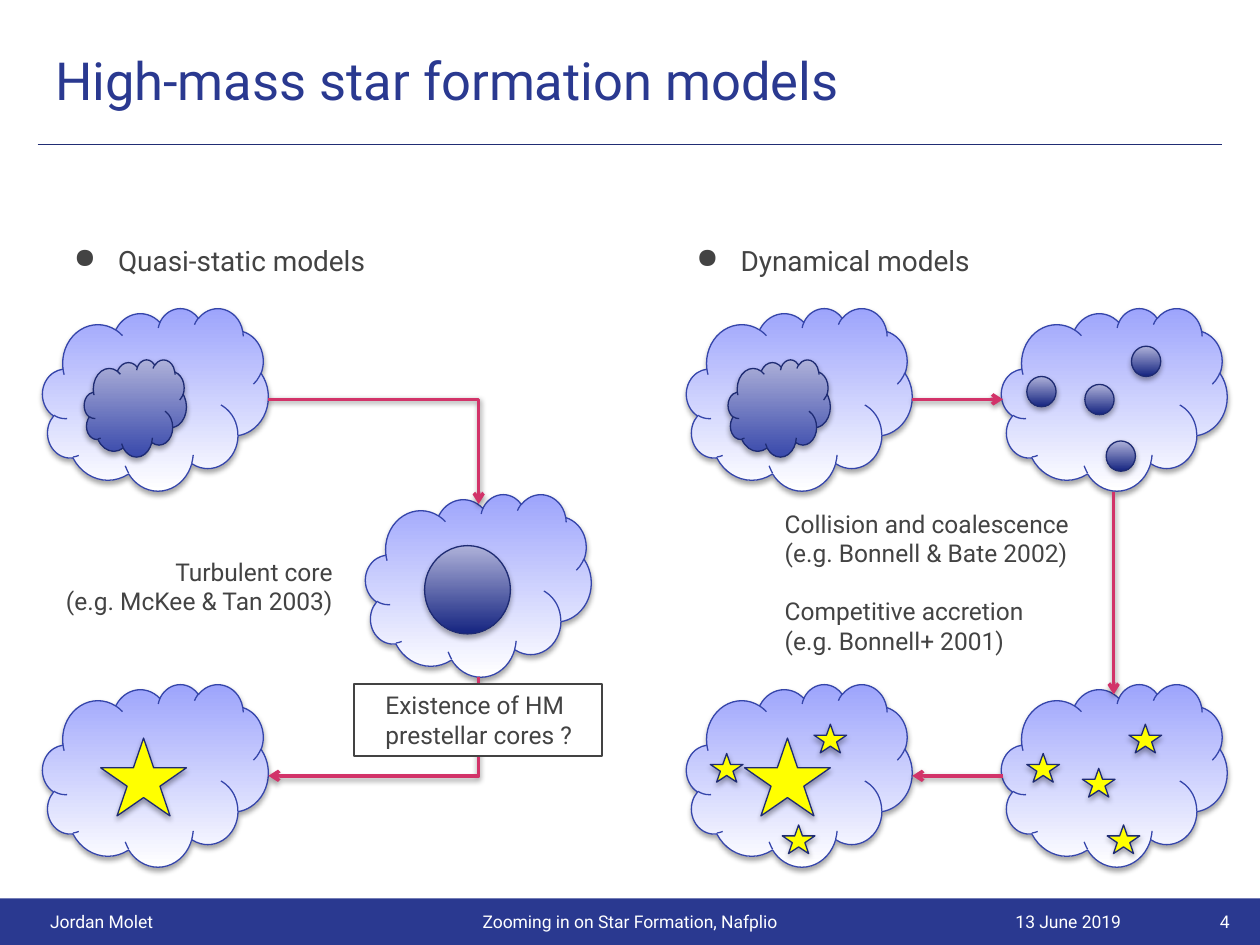
from lxml import etree
from pptx import Presentation
from pptx.dml.color import RGBColor
from pptx.enum.shapes import MSO_CONNECTOR, MSO_SHAPE
from pptx.enum.text import MSO_ANCHOR, MSO_AUTO_SIZE, PP_ALIGN
from pptx.oxml.ns import qn
from pptx.util import Cm, Pt

CLOUD, OVAL, STAR, RECT = (MSO_SHAPE.CLOUD, MSO_SHAPE.OVAL,
                           MSO_SHAPE.STAR_5_POINT, MSO_SHAPE.RECTANGLE)
STRAIGHT, ELBOW = MSO_CONNECTOR.STRAIGHT, MSO_CONNECTOR.ELBOW
LEFT, CENTER, RIGHT = PP_ALIGN.LEFT, PP_ALIGN.CENTER, PP_ALIGN.RIGHT
TOP, MIDDLE = MSO_ANCHOR.TOP, MSO_ANCHOR.MIDDLE
FONT = "Roboto"
COLORS = {
    "brand": "2A3990", "rule": "212D74", "text": "434343", "white": "FFFFFF",
    "arrow": "D23369", "cloud_top": "9DA4FC", "cloud_line": "3545AA",
    "core_top": "AEB1D9", "core_bottom": "152480", "clump_bottom": "3949AB",
    "core_line": "1E2B73", "star": "FFFF00", "black": "000000",
}

TITLE = "High-mass star formation models"
HEADINGS = [("Quasi-static models", 0.86), ("Dynamical models", 13.41)]

# kind: (preset, width, height, fill colours from top to bottom, line)
KINDS = {
    "cloud": (CLOUD, 4.55, 3.68, ("cloud_top", "white"), "cloud_line"),
    "clump": (CLOUD, 2.06, 1.96, ("core_top", "clump_bottom"), "core_line"),
    "core": (OVAL, 1.73, 1.78, ("core_top", "core_bottom"), "core_line"),
    "small core": (OVAL, 0.59, 0.61, ("core_top", "core_bottom"), "core_line"),
    "star": (STAR, 1.73, 1.57, ("star",), "core_line"),
    "small star": (STAR, 0.66, 0.58, ("star",), "core_line"),
}
LEFT_COL, CORE_COL, MID_COL, RIGHT_COL = 0.86, 7.37, 13.84, 20.19
TOP_ROW, CORE_ROW, BOTTOM_ROW = 6.21, 9.96, 13.79

# cloud left, cloud top, contents as (kind, offset x, offset y)
STAGES = [
    (LEFT_COL, TOP_ROW, [("clump", 0.84, 1.04)]),
    (CORE_COL, CORE_ROW, [("core", 1.19, 1.04)]),
    (LEFT_COL, BOTTOM_ROW, [("star", 1.17, 1.09)]),
    (MID_COL, TOP_ROW, [("clump", 0.84, 1.04)]),
    (RIGHT_COL, TOP_ROW, [
        ("small core", 0.51, 1.38), ("small core", 1.68, 1.54),
        ("small core", 2.62, 0.77), ("small core", 2.11, 2.68)]),
    (RIGHT_COL, BOTTOM_ROW, [
        ("small star", 0.51, 1.4), ("small star", 1.63, 1.7),
        ("small star", 2.13, 2.84), ("small star", 2.57, 0.81)]),
    (MID_COL, BOTTOM_ROW, [
        ("star", 1.17, 1.09), ("small star", 0.48, 1.4),
        ("small star", 1.93, 2.84), ("small star", 2.57, 0.81)]),
]

# connector, begin x, begin y, end x, end y, quarter turns
ARROWS = [
    (STRAIGHT, 18.39, 8.05, 20.22, 8.05, 0),
    (STRAIGHT, 22.45, 9.91, 22.45, 14.0, 0),
    (STRAIGHT, 20.22, 15.64, 18.39, 15.64, 0),
    (ELBOW, 5.41, 8.05, 9.65, 10.16, 0),
    (ELBOW, 6.53, 12.52, 8.53, 16.76, 1),
]

# left, top, width, height, alignment, groups of lines
NOTES = [
    (0.86, 11.1, 6.1, 1.45, RIGHT,
     [("Turbulent core", "(e.g. McKee & Tan 2003)")]),
    (15.57, 10.13, 6.38, 3.25, LEFT,
     [("Collision and coalescence", "(e.g. Bonnell & Bate 2002)"),
      ("Competitive accretion", "(e.g. Bonnell+ 2001)")]),
]
QUESTION = "Existence of HM prestellar cores ?"

FOOTER_TOP, FOOTER_HEIGHT = 18.11, 0.94
FOOTER = [  # text, left, width, alignment
    ("Jordan Molet", 0.76, 5.23, LEFT),
    ("Zooming in on Star Formation, Nafplio", 6.17, 13.06, CENTER),
    ("13 June 2019", 19.58, 3.91, CENTER),
    ("4", 23.93, 1.52, CENTER),
]


def rgb(name):
    return RGBColor.from_string(COLORS[name])


def add_child(parent, tag, **attributes):
    child = etree.SubElement(parent, qn(tag))
    for key, value in attributes.items():
        child.set(key, str(value))
    return child


def cast_shadow(effects, distance, opacity):
    shadow = add_child(effects, "a:outerShdw", blurRad=40000, dist=distance,
                       dir=5400000, rotWithShape=0)
    color = add_child(shadow, "a:srgbClr", val=COLORS["black"])
    add_child(color, "a:alpha", val=opacity)


def write(paragraph, text, size, color, align=LEFT):
    paragraph.alignment = align
    run = paragraph.add_run()
    run.text = text
    run.font.name, run.font.size = FONT, Pt(size)
    run.font.color.rgb = rgb(color)


def set_frame(frame, anchor=TOP, vertical_inset=0.25, wrap=True):
    frame.word_wrap = wrap
    frame.auto_size = MSO_AUTO_SIZE.NONE
    frame.vertical_anchor = anchor
    frame.margin_left = frame.margin_right = Cm(0.25)
    frame.margin_top = frame.margin_bottom = Cm(vertical_inset)
    return frame


def add_text_frame(slide, left, top, width, height, **options):
    box = slide.shapes.add_textbox(Cm(left), Cm(top), Cm(width), Cm(height))
    return set_frame(box.text_frame, **options)


def add_plain_rect(slide, left, top, width, height, fill):
    rect = slide.shapes.add_shape(RECT, Cm(left), Cm(top), Cm(width), Cm(height))
    rect.shadow.inherit = False
    rect.fill.solid()
    rect.fill.fore_color.rgb = rgb(fill)
    rect.line.fill.background()
    return rect


def add_body(slide, kind, left, top):
    """Draw a cloud, core or star with its fill, outline and shadow."""
    preset, width, height, fills, outline = KINDS[kind]
    body = slide.shapes.add_shape(preset, Cm(left), Cm(top), Cm(width), Cm(height))
    if len(fills) == 1:
        body.fill.solid()
        body.fill.fore_color.rgb = rgb(fills[0])
    else:
        body.fill.gradient()
        body.fill.gradient_angle = 270
        for stop, color in zip(body.fill.gradient_stops, fills):
            stop.color.rgb = rgb(color)
    body.line.color.rgb = rgb(outline)
    body.line.width = Pt(0.75)
    body.shadow.inherit = False
    cast_shadow(body._element.spPr.find(qn("a:effectLst")), 23000, 35000)


def add_line(slide, connector, points, color, width):
    line = slide.shapes.add_connector(connector, *map(Cm, points))
    line.line.color.rgb = rgb(color)
    line.line.width = Pt(width)
    properties = line._element.spPr
    return properties, add_child(properties, "a:effectLst")


def add_arrow(slide, connector, *points, turns):
    properties, effects = add_line(slide, connector, points, "arrow", 2)
    cast_shadow(effects, 20000, 38000)
    add_child(properties.find(qn("a:ln")), "a:tailEnd", type="arrow")
    if connector == ELBOW:
        properties.find(qn("a:prstGeom")).set("prst", "bentConnector2")
        properties.find(qn("a:xfrm")).set("rot", str(turns * 5400000))


def add_heading(slide, text, left):
    paragraph = add_text_frame(slide, left, 4.55, 11.1, 12.37).paragraphs[0]
    paragraph.line_spacing = 1.15
    properties = paragraph._p.get_or_add_pPr()
    properties.set("marL", str(Cm(1.27)))
    properties.set("indent", str(-Cm(0.89)))
    add_child(add_child(properties, "a:buClr"), "a:srgbClr", val=COLORS["text"])
    add_child(properties, "a:buChar", char="●")
    write(paragraph, text, 16, "text")


def add_note(slide, left, top, width, height, align, groups):
    frame = add_text_frame(slide, left, top, width, height,
                           vertical_inset=0.13, wrap=False)
    paragraph = frame.paragraphs[0]
    for g, lines in enumerate(groups):
        for n, text in enumerate(lines):
            if g or n:
                paragraph = frame.add_paragraph()
            if g and not n:
                paragraph.space_before = Pt(16.4)
            write(paragraph, text, 14, "text", align)


def main():
    prs = Presentation()
    prs.slide_width, prs.slide_height = Cm(25.4), Cm(19.05)
    slide = prs.slides.add_slide(prs.slide_layouts[5])

    title = slide.shapes.title
    title.left, title.top = Cm(0.86), Cm(0.71)
    title.width, title.height = Cm(24.16), Cm(1.83)
    write(set_frame(title.text_frame).paragraphs[0], TITLE, 30, "brand")
    add_line(slide, STRAIGHT, (0.76, 2.92, 24.64, 2.92), "rule", 0.75)

    add_plain_rect(slide, 0, FOOTER_TOP, 25.4, FOOTER_HEIGHT, "brand")
    for text, left, width, align in FOOTER:
        frame = add_text_frame(slide, left, FOOTER_TOP, width, FOOTER_HEIGHT,
                               anchor=MIDDLE)
        write(frame.paragraphs[0], text, 10, "white", align)

    for text, left in HEADINGS:
        add_heading(slide, text, left)
    for left, top, contents in STAGES:
        add_body(slide, "cloud", left, top)
        for kind, dx, dy in contents:
            add_body(slide, kind, left + dx, top + dy)
    for *arrow, turns in ARROWS:
        add_arrow(slide, *arrow, turns=turns)
    for note in NOTES:
        add_note(slide, *note)

    question = add_plain_rect(slide, 7.14, 13.79, 5.0, 1.45, "white")
    question.line.color.rgb = rgb("text")
    question.line.width = Pt(0.75)
    paragraph = set_frame(question.text_frame, vertical_inset=0.13).paragraphs[0]
    paragraph._p.get_or_add_pPr().set("marL", str(Cm(0.38)))
    write(paragraph, QUESTION, 14, "text")

    prs.save("out.pptx")


if __name__ == "__main__":
    main()
